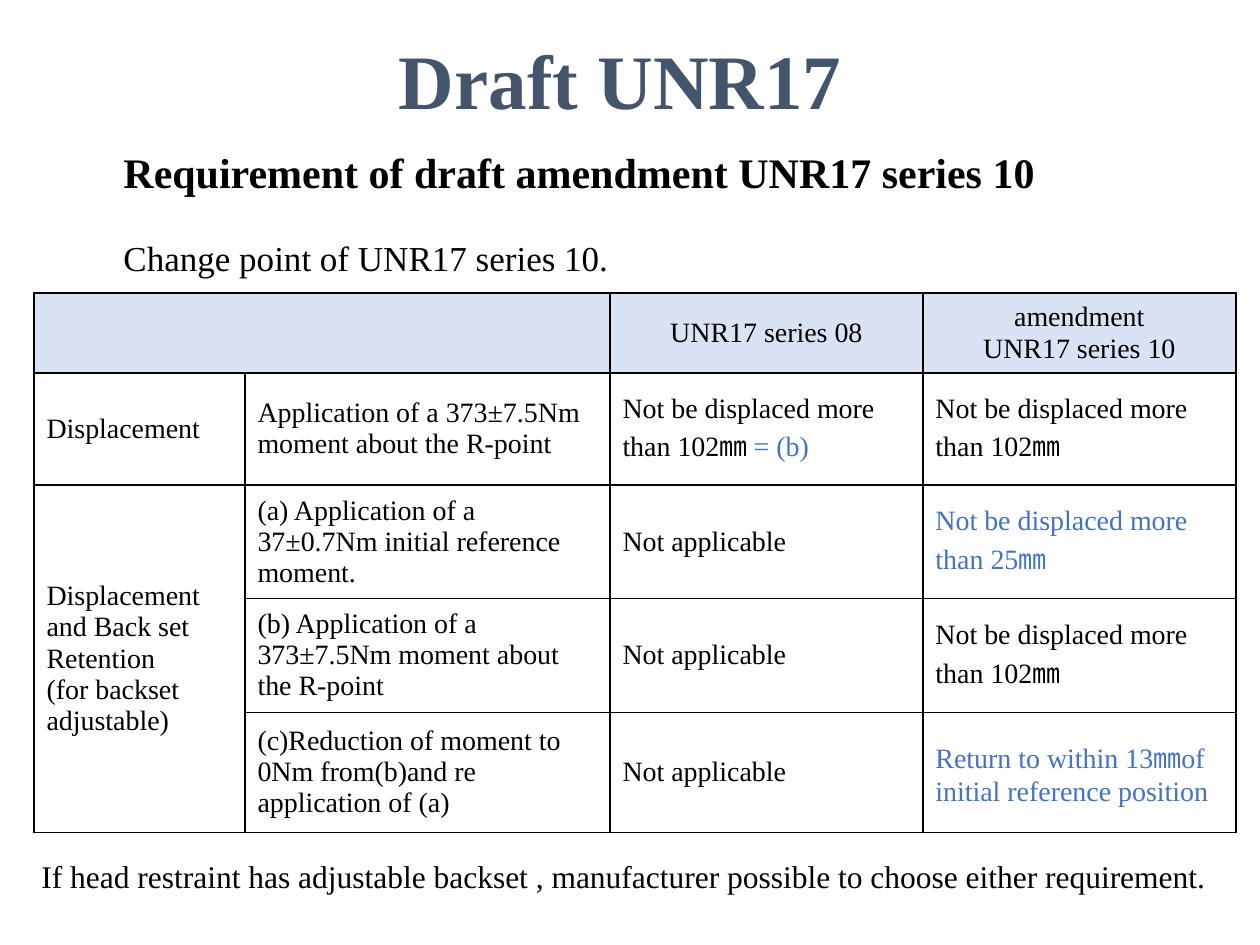
from lxml import etree
from pptx import Presentation
from pptx import util as u
from pptx.dml.color import RGBColor
from pptx.enum import text
from pptx.oxml.ns import qn

PX = 914400 / 126
FONT = "Times New Roman"
BLACK = RGBColor(0x00, 0x00, 0x00)
SLATE = RGBColor(0x44, 0x54, 0x6A)
BLUE = RGBColor(0x44, 0x72, 0xC4)
PALE_BLUE = RGBColor(0xDA, 0xE3, 0xF3)
CENTER = text.PP_ALIGN.CENTER
MIDDLE = text.MSO_ANCHOR.MIDDLE

COLUMNS = (211, 365, 313, 313)
ROWS = (80, 112, 113, 114, 120)
NOT_APPLICABLE = "Not applicable"
LIMIT_102 = "Not be displaced more than 102㎜"
CELLS = (
    ("", "", "UNR17 series 08", "amendment\nUNR17 series 10"),
    ("Displacement", "Application of a 373±7.5Nm moment about the R-point",
     LIMIT_102 + " ", LIMIT_102),
    ("Displacement\nand Back set Retention\n(for backset adjustable)",
     "(a) Application of a 37±0.7Nm initial reference moment.",
     NOT_APPLICABLE, "Not be displaced more than 25㎜"),
    ("", "(b) Application of a 373±7.5Nm moment about the R-point",
     NOT_APPLICABLE, LIMIT_102),
    ("", "(c)Reduction of moment to 0Nm from(b)and re application of (a)",
     NOT_APPLICABLE, "Return to within 13㎜of initial reference position"),
)
BLUE_CELLS = {(2, 3), (4, 3)}


def px(n):
    return u.Emu(round(n * PX))


def style(p, size, color=BLACK, bold=False, align=None):
    f = p.font
    f.name, f.size, f.bold = FONT, u.Pt(size), bold
    f.color.rgb = color
    p.alignment = align


def add_text_box(s, x, y, w, h, content, wrap=True):
    tf = s.shapes.add_textbox(px(x), px(y), px(w), px(h)).text_frame
    tf.word_wrap = wrap
    tf.text = content
    return tf


def set_borders(cell):
    tcPr = cell._tc.get_or_add_tcPr()
    for side in ("a:lnL", "a:lnR", "a:lnT", "a:lnB"):
        ln = etree.SubElement(tcPr, qn(side), w=str(u.Pt(1)))
        fill = etree.SubElement(ln, qn("a:solidFill"))
        etree.SubElement(fill, qn("a:srgbClr"), val=str(BLACK))


def fill_cell(cell, content, header, color):
    set_borders(cell)
    if header:
        cell.fill.solid()
        cell.fill.fore_color.rgb = PALE_BLUE
    else:
        cell.fill.background()
    cell.vertical_anchor = MIDDLE
    cell.text_frame.text = content
    for p in cell.text_frame.paragraphs:
        style(p, 16, color, align=CENTER if header else None)


def add_requirements_table(s):
    table = s.shapes.add_table(len(ROWS), len(COLUMNS), px(34), px(293),
                               px(sum(COLUMNS)), px(sum(ROWS))).table
    table.first_row = table.horz_banding = False
    for column, width in zip(table.columns, COLUMNS):
        column.width = px(width)
    for row, height in zip(table.rows, ROWS):
        row.height = px(height)
    for i, row in enumerate(CELLS):
        for j, content in enumerate(row):
            color = BLUE if (i, j) in BLUE_CELLS else BLACK
            fill_cell(table.cell(i, j), content, i == 0, color)
    table.cell(0, 0).merge(table.cell(0, 1))
    table.cell(2, 0).merge(table.cell(4, 0))

    r = table.cell(1, 2).text_frame.paragraphs[0].add_run()
    r.text = "= (b)"
    r.font.color.rgb = BLUE


def main():
    prs = Presentation()
    prs.slide_width, prs.slide_height = px(1260), px(945)
    s = prs.slides.add_slide(prs.slide_layouts[6])

    title = add_text_box(s, 63, 0, 1134, 158, "Draft UNR17 ")
    title.vertical_anchor = MIDDLE
    style(title.paragraphs[0], 44, SLATE, bold=True, align=CENTER)

    intro = add_text_box(
        s, 111, 140, 979, 149,
        "Requirement of draft amendment UNR17 series 10\n"
        "Change point of UNR17 series 10.")
    heading, subheading = intro.paragraphs
    style(heading, 24, bold=True)
    style(subheading, 20)
    subheading.space_before = u.Pt(23)

    add_requirements_table(s)

    note = add_text_box(
        s, 29, 851, 1213, 50,
        "If head restraint has adjustable backset , "
        "manufacturer possible to choose either requirement.", wrap=False)
    style(note.paragraphs[0], 18)

    prs.save("out.pptx")


if __name__ == "__main__":
    main()
